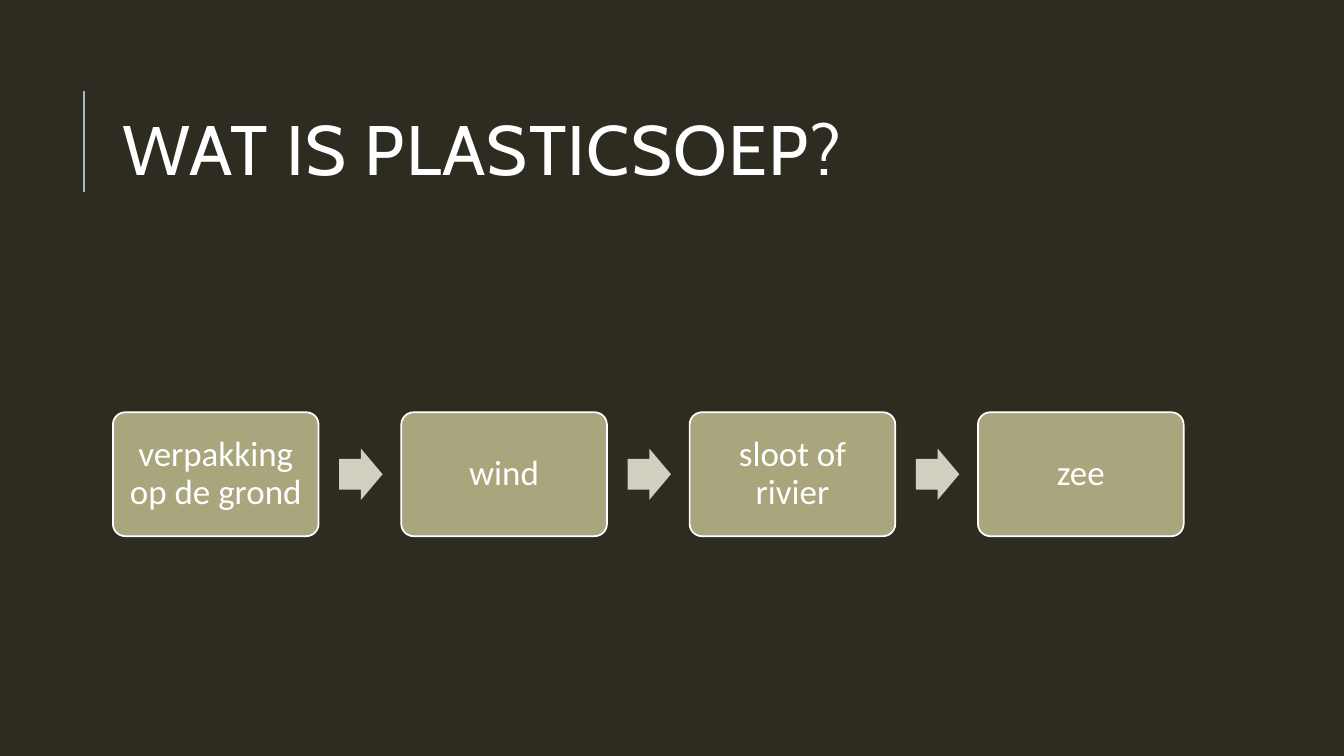
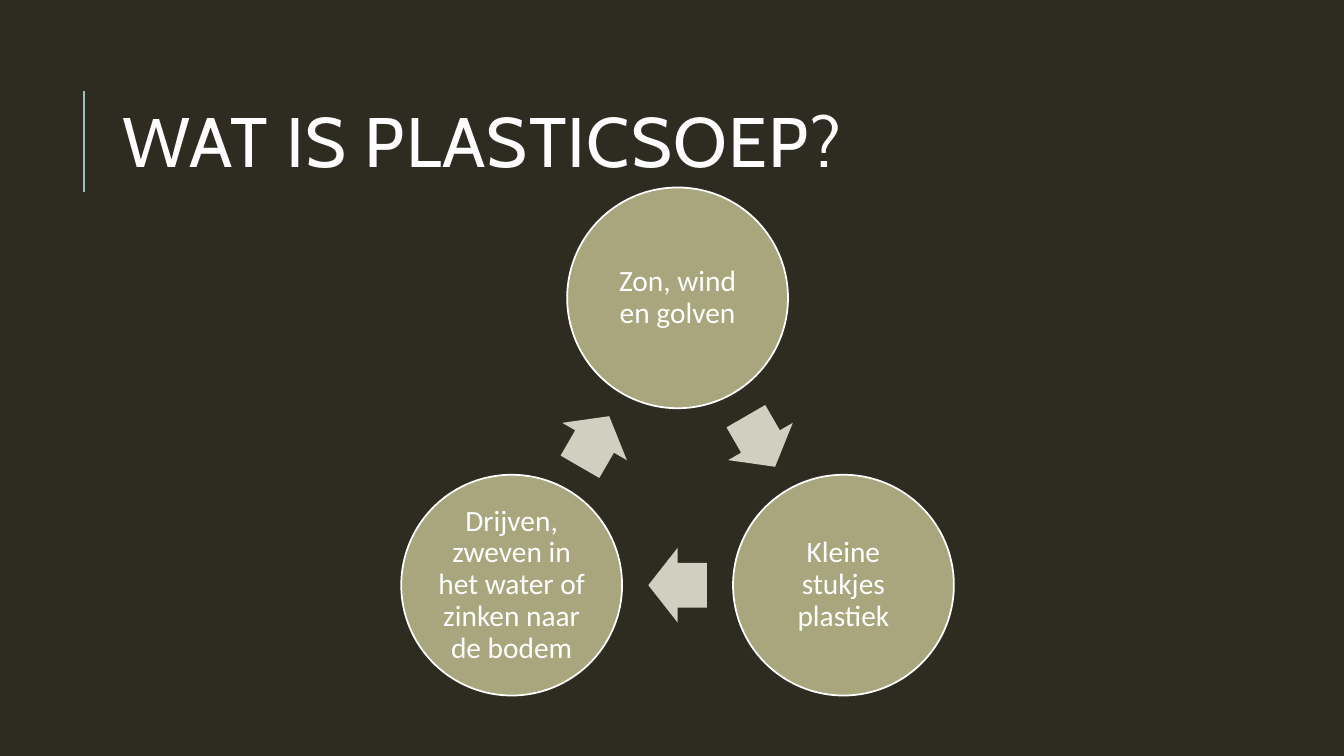
from math import cos, radians, sin

from pptx import Presentation
from pptx.dml.color import RGBColor
from pptx.enum.shapes import MSO_CONNECTOR, MSO_SHAPE
from pptx.enum.text import MSO_ANCHOR, PP_ALIGN
from pptx.oxml.ns import qn
from pptx.util import Inches, Pt
from lxml.etree import SubElement

DARK, WHITE, RULE = "2E2B21", "FFFFFF", "9CBEBD"
OLIVE, PALE = "A9A57C", "D1CFBF"
TITLE = "WAT IS PLASTICSOEP?"
SIDES = ("left", "right", "top", "bottom")


def tint(part, color):
    if hasattr(part, "solid"):
        part.solid()
        part = part.fore_color
    part.rgb = RGBColor.from_string(color)


def style(part, values):
    for name, value in values.items():
        setattr(part, name, value)


def write(shape, text, font, size, inset, align, space):
    frame = shape.text_frame
    margins = {f"margin_{side}": Inches(inset) for side in SIDES}
    style(frame, {"word_wrap": True, "vertical_anchor": MSO_ANCHOR.MIDDLE, **margins})
    para = frame.paragraphs[0]
    style(para, {"alignment": align, "line_spacing": space})
    run = para.add_run()
    run.text = text
    style(run.font, {"name": font, "size": Pt(size)})
    tint(run.font.color, WHITE)


def draw(slide, kind, box, color, adjust=()):
    shape = slide.shapes.add_shape(kind, *map(Inches, box))
    shape.shadow.inherit = False
    tint(shape.fill, color)
    shape.line.fill.background()
    for index, value in enumerate(adjust):
        shape.adjustments[index] = value
    return shape


def add_node(slide, kind, box, text, size, inset, adjust=()):
    shape = draw(slide, kind, box, OLIVE, adjust)
    tint(shape.line.fill, WHITE)
    shape.line.width = Pt(1.25)
    write(shape, text, "Calibri", size, inset, PP_ALIGN.CENTER, 0.9)


def add_arrow(slide, x, y, width, height, angle=0):
    box = (x - width / 2, y - height / 2, width, height)
    shape = draw(slide, MSO_SHAPE.RIGHT_ARROW, box, PALE, (0.6, 0.5))
    shape.rotation = angle


def add_title(slide, box, space):
    left, top, width, height = box
    x, middle = left - 0.29, top + height / 2 - 0.06
    ends = map(Inches, (x, middle + 0.5, x, middle - 0.5))
    rule = slide.shapes.add_connector(MSO_CONNECTOR.STRAIGHT, *ends)
    tint(rule.line.fill, RULE)
    rule.line.width = Pt(1.5)
    SubElement(rule.element.spPr, qn("a:effectLst"))
    title = slide.shapes.add_textbox(*map(Inches, box))
    write(title, TITLE, "Cabin", 50, 0.1, PP_ALIGN.LEFT, space)
    for props in title.element.iter(qn("a:rPr")):
        props.set("spc", "100")


def add_slide(deck, space):
    slide = deck.slides.add_slide(deck.slide_layouts[6])
    add_title(slide, (1.12, 0.64, 10.63, 1.64), space)
    return slide


def add_chain(slide, box, labels):
    left, top, width, height = box
    wide = 2.04
    step = (width - wide) / (len(labels) - 1)
    for index, label in enumerate(labels):
        x = left + index * step
        if index:
            add_arrow(slide, x - 0.4, top + height / 2, 0.43, 0.51)
        add_node(slide, MSO_SHAPE.ROUNDED_RECTANGLE, (x, top, wide, height),
                 label, 25, 0.1, (0.1,))


def add_cycle(slide, box, labels):
    left, top, width, height = box
    size = 2.19
    orbit = (height - size) / 1.5
    mid_x, mid_y = left + width / 2, top + size / 2 + orbit
    turn = 360 / len(labels)

    def spot(angle, radius):
        angle = radians(angle)
        return mid_x + radius * cos(angle), mid_y + radius * sin(angle)

    for index, label in enumerate(labels):
        angle = index * turn - 90
        x, y = spot(angle, orbit)
        add_node(slide, MSO_SHAPE.OVAL, (x - size / 2, y - size / 2, size, size),
                 label, 21, 0.03)
        angle += turn / 2
        add_arrow(slide, *spot(angle, orbit / 2), 0.58, 0.74, angle + 90)


def main():
    deck = Presentation()
    style(deck, {"slide_width": Inches(13.33), "slide_height": Inches(7.5)})
    tint(deck.slide_master.background.fill, DARK)
    add_chain(add_slide(deck, 1.0), (1.12, 4.09, 10.62, 1.23),
              ("verpakking op de grond", "wind", "sloot of rivier", "zee"))
    add_cycle(add_slide(deck, 0.8), (3.98, 1.86, 5.48, 5.04),
              ("Zon, wind en golven", "Kleine stukjes plastiek",
               "Drijven, zweven in het water of zinken naar de bodem"))
    deck.save("out.pptx")


if __name__ == "__main__":
    main()
